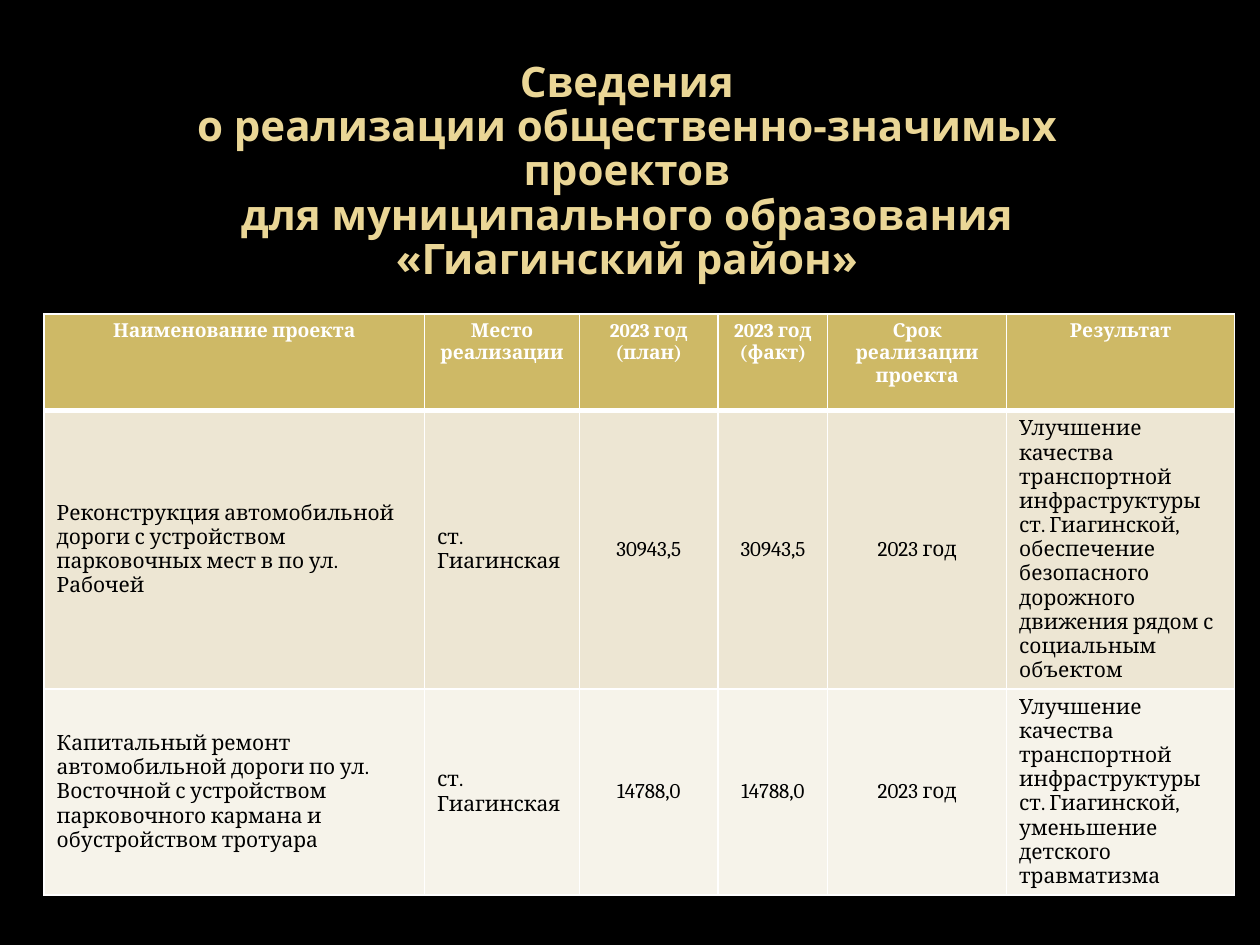
from dataclasses import dataclass

from lxml import etree
from pptx import Presentation
from pptx.dml.color import RGBColor
from pptx.enum.text import MSO_ANCHOR, MSO_AUTO_SIZE, PP_ALIGN
from pptx.oxml.ns import qn
from pptx.slide import Slide
from pptx.table import _Cell
from pptx.text.text import _Paragraph
from pptx.util import Inches, Pt

LEFT, CENTER = PP_ALIGN.LEFT, PP_ALIGN.CENTER
TOP, MIDDLE = MSO_ANCHOR.TOP, MSO_ANCHOR.MIDDLE
NO_AUTOFIT = MSO_AUTO_SIZE.NONE


@dataclass(frozen=True)
class Theme:
    background: str = "000000"
    title: str = "EAD696"
    header_fill: str = "CEB966"
    band_fills: tuple[str, str] = ("EDE6D3", "F6F3EA")
    header_text: str = "FFFFFF"
    body_text: str = "000000"
    border: str = "FFFFFF"
    title_font: str = "Open Sans"
    table_font: str = "Cambria"
    title_size: int = 24
    header_size: int = 11
    body_size: int = 12
    thin_line: int = 1
    thick_line: int = 3


@dataclass(frozen=True)
class Column:
    heading: str
    width: float
    alignment: PP_ALIGN = CENTER
    anchor: MSO_ANCHOR = MIDDLE


@dataclass(frozen=True)
class Project:
    name: str
    place: str
    plan: str
    fact: str
    term: str
    result: str
    height: float

    def values(self) -> tuple[str, ...]:
        return self.name, self.place, self.plan, self.fact, self.term, self.result


THEME = Theme()
HEADER_HEIGHT = 0.77
TITLE_LINES = (
    "Сведения",
    "о реализации общественно-значимых проектов",
    "для муниципального образования",
    "«Гиагинский район»",
)
COLUMNS = (
    Column("Наименование проекта", 3.02, LEFT),
    Column("Место реализации", 1.23, LEFT),
    Column("2023 год\n(план)", 1.1),
    Column("2023 год (факт)", 0.87),
    Column("Срок реализации проекта", 1.42),
    Column("Результат", 1.81, LEFT, TOP),
)
PROJECTS = (
    Project(
        "Реконструкция автомобильной дороги с устройством парковочных мест в по ул. Рабочей",
        "ст. Гиагинская", "30943,5", "30943,5", "2023 год",
        "Улучшение качества транспортной инфраструктуры ст. Гиагинской, обеспечение "
        "безопасного дорожного движения рядом с социальным объектом",
        2,
    ),
    Project(
        "Капитальный ремонт автомобильной дороги по ул. Восточной с устройством "
        "парковочного кармана и обустройством тротуара",
        "ст. Гиагинская", "14788,0", "14788,0", "2023 год",
        "Улучшение качества транспортной инфраструктуры ст. Гиагинской, уменьшение "
        "детского травматизма",
        1.09,
    ),
)
TITLE_FORMAT = {"name": THEME.title_font, "size": Pt(THEME.title_size), "bold": True}
HEADER_FORMAT = {"name": THEME.table_font, "size": Pt(THEME.header_size), "bold": True}
BODY_FORMAT = {"name": THEME.table_font, "size": Pt(THEME.body_size), "bold": False}


def set_attributes(target: object, values: dict) -> None:
    for name, value in values.items():
        setattr(target, name, value)


def format_paragraph(paragraph: _Paragraph, font_format: dict, color: str,
                     alignment: PP_ALIGN) -> None:
    paragraph.alignment = alignment
    for run in paragraph.runs:
        set_attributes(run.font, font_format)
        run.font.color.rgb = RGBColor.from_string(color)


def set_borders(cell: _Cell, top: int, bottom: int) -> None:
    properties = cell._tc.get_or_add_tcPr()
    widths = {"a:lnL": THEME.thin_line, "a:lnR": THEME.thin_line, "a:lnT": top, "a:lnB": bottom}
    for position, (tag, width) in enumerate(widths.items()):
        line = etree.Element(qn(tag), w=str(Pt(width)))
        fill = etree.SubElement(line, qn("a:solidFill"))
        etree.SubElement(fill, qn("a:srgbClr"), val=THEME.border)
        properties.insert(position, line)


def fill_cell(cell: _Cell, text: str, fill: str, font_format: dict, color: str,
              alignment: PP_ALIGN, anchor: MSO_ANCHOR, top: int, bottom: int) -> None:
    cell.text = text
    cell.vertical_anchor = anchor
    cell.fill.solid()
    cell.fill.fore_color.rgb = RGBColor.from_string(fill)
    for paragraph in cell.text_frame.paragraphs:
        format_paragraph(paragraph, font_format, color, alignment)
    set_borders(cell, top, bottom)


def add_title(slide: Slide) -> None:
    title = slide.shapes.title
    set_attributes(title, {"left": Inches(0.67), "top": Inches(1.07),
                           "width": Inches(8.61), "height": Inches(0.6)})
    frame = title.text_frame
    frame.text = "\v".join(TITLE_LINES)
    set_attributes(frame, {"word_wrap": True, "auto_size": NO_AUTOFIT,
                           "vertical_anchor": MIDDLE})
    paragraph = frame.paragraphs[0]
    paragraph.line_spacing = 0.88
    format_paragraph(paragraph, TITLE_FORMAT, THEME.title, CENTER)


def add_project_table(slide: Slide) -> None:
    heights = [HEADER_HEIGHT] + [project.height for project in PROJECTS]
    width = sum(column.width for column in COLUMNS)
    table = slide.shapes.add_table(len(heights), len(COLUMNS), Inches(0.35), Inches(2.49),
                                   Inches(width), Inches(sum(heights))).table
    for row, height in zip(table.rows, heights):
        row.height = Inches(height)
    for column_index, column in enumerate(COLUMNS):
        table.columns[column_index].width = Inches(column.width)
        fill_cell(table.cell(0, column_index), column.heading, THEME.header_fill, HEADER_FORMAT,
                  THEME.header_text, CENTER, TOP, THEME.thin_line, THEME.thick_line)
        for row_index, project in enumerate(PROJECTS, 1):
            top = THEME.thick_line if row_index == 1 else THEME.thin_line
            fill_cell(table.cell(row_index, column_index), project.values()[column_index],
                      THEME.band_fills[(row_index - 1) % 2], BODY_FORMAT, THEME.body_text,
                      column.alignment, column.anchor, top, THEME.thin_line)


def main() -> None:
    presentation = Presentation()
    set_attributes(presentation, {"slide_width": Inches(10), "slide_height": Inches(7.5)})
    slide = presentation.slides.add_slide(presentation.slide_layouts[5])
    slide.background.fill.solid()
    slide.background.fill.fore_color.rgb = RGBColor.from_string(THEME.background)
    add_title(slide)
    add_project_table(slide)
    presentation.save("out.pptx")


if __name__ == "__main__":
    main()
